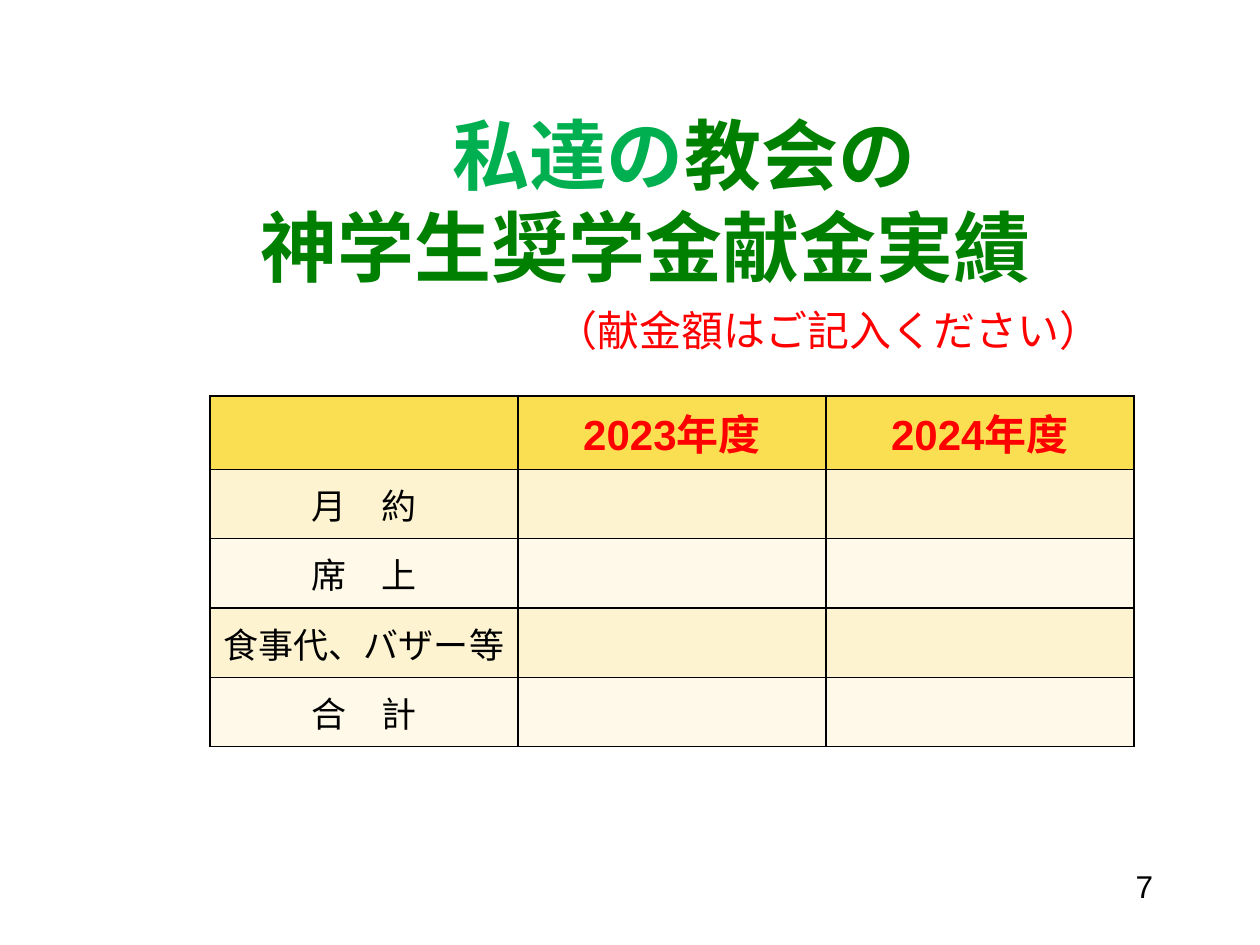
from dataclasses import dataclass

from lxml.etree import SubElement
from pptx import Presentation
from pptx.dml.color import RGBColor
from pptx.enum.text import MSO_ANCHOR, MSO_AUTO_SIZE, PP_ALIGN
from pptx.oxml.ns import qn
from pptx.util import Inches, Pt


@dataclass(frozen=True)
class Theme:
    latin: str = "Arial"
    japanese: str = "Noto Sans CJK JP"
    green: str = "008000"
    light_green: str = "00B050"
    red: str = "FF0000"
    black: str = "000000"
    header_fill: str = "FBDF53"
    band_fills: tuple = ("FDF3D1", "FEF9E9")
    title_size: int = 44
    note_size: int = 24
    header_size: int = 24
    body_size: int = 20
    number_size: int = 18
    border: float = 1


class SlideBuilder:
    """Places elements on a grid of 120 columns by 90 rows."""

    def __init__(self, presentation, theme):
        self.theme = theme
        self.column = presentation.slide_width / 120
        self.row = presentation.slide_height / 90
        self.slide = presentation.slides.add_slide(presentation.slide_layouts[5])

    def box(self, left, top, width, height):
        return (round(left * self.column), round(top * self.row),
                round(width * self.column), round(height * self.row))

    def style(self, font, size, color, name, bold=False):
        font.size, font.bold, font.name = Pt(size), bold, name
        font.color.rgb = RGBColor.from_string(color)
        SubElement(font._element, qn("a:ea"), typeface=self.theme.japanese)

    def title(self, box, lines):
        """Each line: runs of (text, colour), size, bold, line pitch, left indent."""
        shape = self.slide.shapes.title
        shape.left, shape.top, shape.width, shape.height = self.box(*box)
        frame = shape.text_frame
        frame.auto_size = MSO_AUTO_SIZE.NONE
        frame.vertical_anchor = MSO_ANCHOR.MIDDLE
        for index, (runs, size, bold, pitch, indent) in enumerate(lines):
            paragraph = frame.add_paragraph() if index else frame.paragraphs[0]
            paragraph.alignment = PP_ALIGN.LEFT if indent else PP_ALIGN.CENTER
            paragraph.line_spacing = Pt(pitch)
            paragraph.space_before = Pt(0)
            if indent:
                paragraph._p.get_or_add_pPr().set("marL", str(Inches(indent)))
            for text, color in runs:
                run = paragraph.add_run()
                run.text = text
                self.style(run.font, size, color, self.theme.japanese, bold)

    def text(self, box, text, size, alignment):
        frame = self.slide.shapes.add_textbox(*self.box(*box)).text_frame
        frame.word_wrap = True
        paragraph = frame.paragraphs[0]
        paragraph.text, paragraph.alignment = text, alignment
        self.style(paragraph.font, size, self.theme.black, self.theme.latin)

    def table(self, box, rows):
        theme = self.theme
        shape = self.slide.shapes.add_table(len(rows), len(rows[0]), *self.box(*box))
        for row_index, row in enumerate(rows):
            header = row_index == 0
            fill = theme.header_fill if header else theme.band_fills[(row_index - 1) % 2]
            for column_index, text in enumerate(row):
                cell = shape.table.cell(row_index, column_index)
                cell.margin_left = cell.margin_right = Inches(0.05)
                cell.vertical_anchor = MSO_ANCHOR.MIDDLE
                self.borders(cell)
                cell.fill.solid()
                cell.fill.fore_color.rgb = RGBColor.from_string(fill)
                if text:
                    paragraph = cell.text_frame.paragraphs[0]
                    paragraph.text, paragraph.alignment = text, PP_ALIGN.CENTER
                    self.style(paragraph.font,
                               theme.header_size if header else theme.body_size,
                               theme.red if header else theme.black,
                               theme.latin, header)

    def borders(self, cell):
        properties = cell._tc.get_or_add_tcPr()
        for side in ("a:lnL", "a:lnR", "a:lnT", "a:lnB"):
            line = SubElement(properties, qn(side), w=str(Pt(self.theme.border)))
            fill = SubElement(line, qn("a:solidFill"))
            SubElement(fill, qn("a:srgbClr"), val=self.theme.black)


def main():
    presentation = Presentation()
    presentation.slide_width, presentation.slide_height = Inches(10), Inches(7.5)
    theme = Theme()
    builder = SlideBuilder(presentation, theme)

    # Title with the request to fill in the amounts
    builder.title((12, 9, 99, 26), [
        ([("\u3000私達の".replace("\u3000", "　"), theme.light_green), ("教会の", theme.green)],
         theme.title_size, True, 53, 0),
        ([("神学生奨学金献金実績", theme.green)], theme.title_size, True, 53, 0),
        ([("（献金額はご記入ください）", theme.red)], theme.note_size, False, 36, 3.31),
    ])

    # Offerings by year, left open for entries
    labels = ["月　約", "席　上", "食事代、バザー等", "合　計"]
    builder.table((20, 37.7, 88, 33),
                  [["", "2023年度", "2024年度"]] + [[label, "", ""] for label in labels])

    # Slide number
    builder.text((86, 82, 25, 6), "7", theme.number_size, PP_ALIGN.RIGHT)

    presentation.save("out.pptx")


if __name__ == "__main__":
    main()
